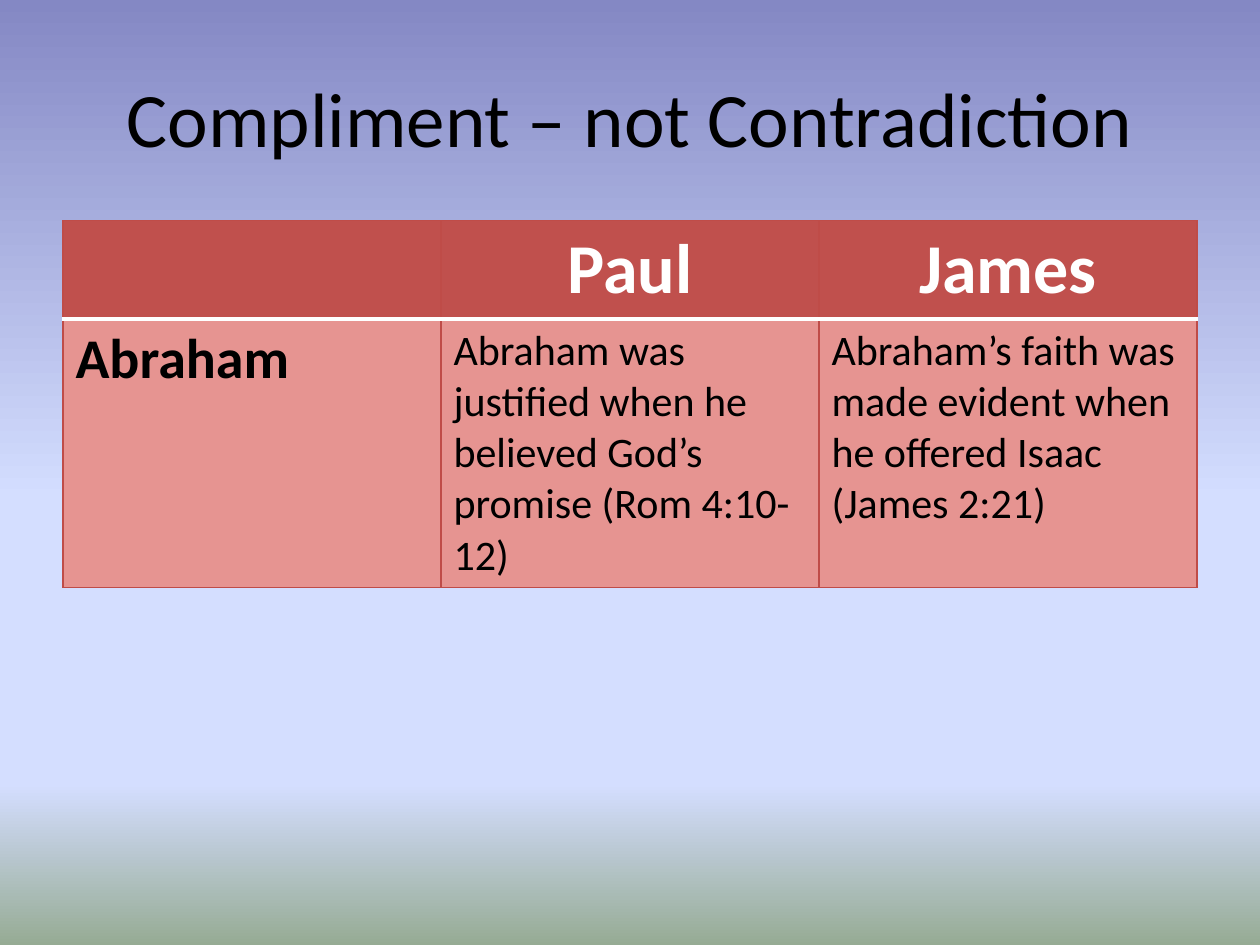
from dataclasses import dataclass

from lxml.etree import SubElement
from pptx import Presentation
from pptx.dml.color import RGBColor
from pptx.enum.text import MSO_ANCHOR, PP_ALIGN
from pptx.oxml.ns import qn
from pptx.slide import Slide
from pptx.table import _Cell
from pptx.util import Cm, Pt

FONT = "Calibri"
BLACK = RGBColor(0x00, 0x00, 0x00)
WHITE = RGBColor(0xFF, 0xFF, 0xFF)
HEADER_RED = RGBColor(0xC0, 0x50, 0x4D)
BODY_PINK = RGBColor(0xE6, 0x94, 0x91)
BORDER_RED = RGBColor(0xBF, 0x4C, 0x48)
SKY_TOP = RGBColor(0x84, 0x88, 0xC4)
SKY_PALE = RGBColor(0xD4, 0xDE, 0xFF)
GROUND_GREEN = RGBColor(0x96, 0xAB, 0x94)
BACKGROUND_STOPS = [(0, SKY_TOP), (53, SKY_PALE), (83, SKY_PALE), (100, GROUND_GREEN)]

LEFT, WIDTH = Cm(1.27), Cm(22.86)
ROW_HEIGHTS = [Cm(1.98), Cm(5.41)]


@dataclass
class CellText:
    text: str
    size: int
    bold: bool = True
    alignment: PP_ALIGN = PP_ALIGN.LEFT


ROWS = [
    [
        CellText("", 40),
        CellText("Paul", 40, alignment=PP_ALIGN.CENTER),
        CellText("James", 40, alignment=PP_ALIGN.CENTER),
    ],
    [
        CellText("Abraham", 32),
        CellText("Abraham was justified when he believed God’s promise (Rom 4:10-12)", 24, False),
        CellText("Abraham’s faith was made evident when he offered Isaac (James 2:21)", 24, False),
    ],
]


def set_background(slide: Slide) -> None:
    fill = slide.background.fill
    fill.gradient()
    fill.gradient_angle = 270
    stop_list = next(slide.element.iter(qn("a:gsLst")))
    for stop in list(stop_list):
        stop_list.remove(stop)
    for percent, color in BACKGROUND_STOPS:
        stop = SubElement(stop_list, qn("a:gs"), pos=str(percent * 1000))
        SubElement(stop, qn("a:srgbClr"), val=str(color))


def add_border(cell: _Cell, side: str, color: RGBColor, width: float) -> None:
    properties = cell._tc.get_or_add_tcPr()
    line = SubElement(properties, qn(f"a:ln{side}"), w=str(Pt(width)))
    SubElement(SubElement(line, qn("a:solidFill")), qn("a:srgbClr"), val=str(color))


def format_cell(cell: _Cell, content: CellText, is_header: bool) -> None:
    # Borders: a white rule separates the header from the body
    white_side = "B" if is_header else "T"
    for side in "LRTB":
        if side == white_side:
            add_border(cell, side, WHITE, 2)
        else:
            add_border(cell, side, BORDER_RED, 0.75)
    cell.fill.solid()
    cell.fill.fore_color.rgb = HEADER_RED if is_header else BODY_PINK

    # Text
    cell.text = content.text
    paragraph = cell.text_frame.paragraphs[0]
    paragraph.alignment = content.alignment
    paragraph.font.name = FONT
    paragraph.font.size = Pt(content.size)
    paragraph.font.bold = content.bold
    paragraph.font.color.rgb = WHITE if is_header else BLACK


def add_title(slide: Slide, text: str) -> None:
    title = slide.shapes.title
    title.left, title.top, title.width, title.height = LEFT, Cm(0.76), WIDTH, Cm(3.18)
    title.text_frame.text = text
    title.text_frame.vertical_anchor = MSO_ANCHOR.MIDDLE
    paragraph = title.text_frame.paragraphs[0]
    paragraph.alignment = PP_ALIGN.CENTER
    paragraph.font.name = FONT
    paragraph.font.size = Pt(44)
    paragraph.font.color.rgb = BLACK


def add_comparison_table(slide: Slide) -> None:
    table = slide.shapes.add_table(
        len(ROWS), len(ROWS[0]), LEFT, Cm(4.45), WIDTH, sum(ROW_HEIGHTS)
    ).table
    for row_index, row in enumerate(ROWS):
        table.rows[row_index].height = ROW_HEIGHTS[row_index]
        for column_index, content in enumerate(row):
            format_cell(table.cell(row_index, column_index), content, row_index == 0)


def main() -> None:
    presentation = Presentation()
    presentation.slide_width, presentation.slide_height = Cm(25.4), Cm(19.05)
    slide = presentation.slides.add_slide(presentation.slide_layouts[5])
    set_background(slide)
    add_title(slide, "Compliment – not Contradiction")
    add_comparison_table(slide)
    presentation.save("out.pptx")


if __name__ == "__main__":
    main()
